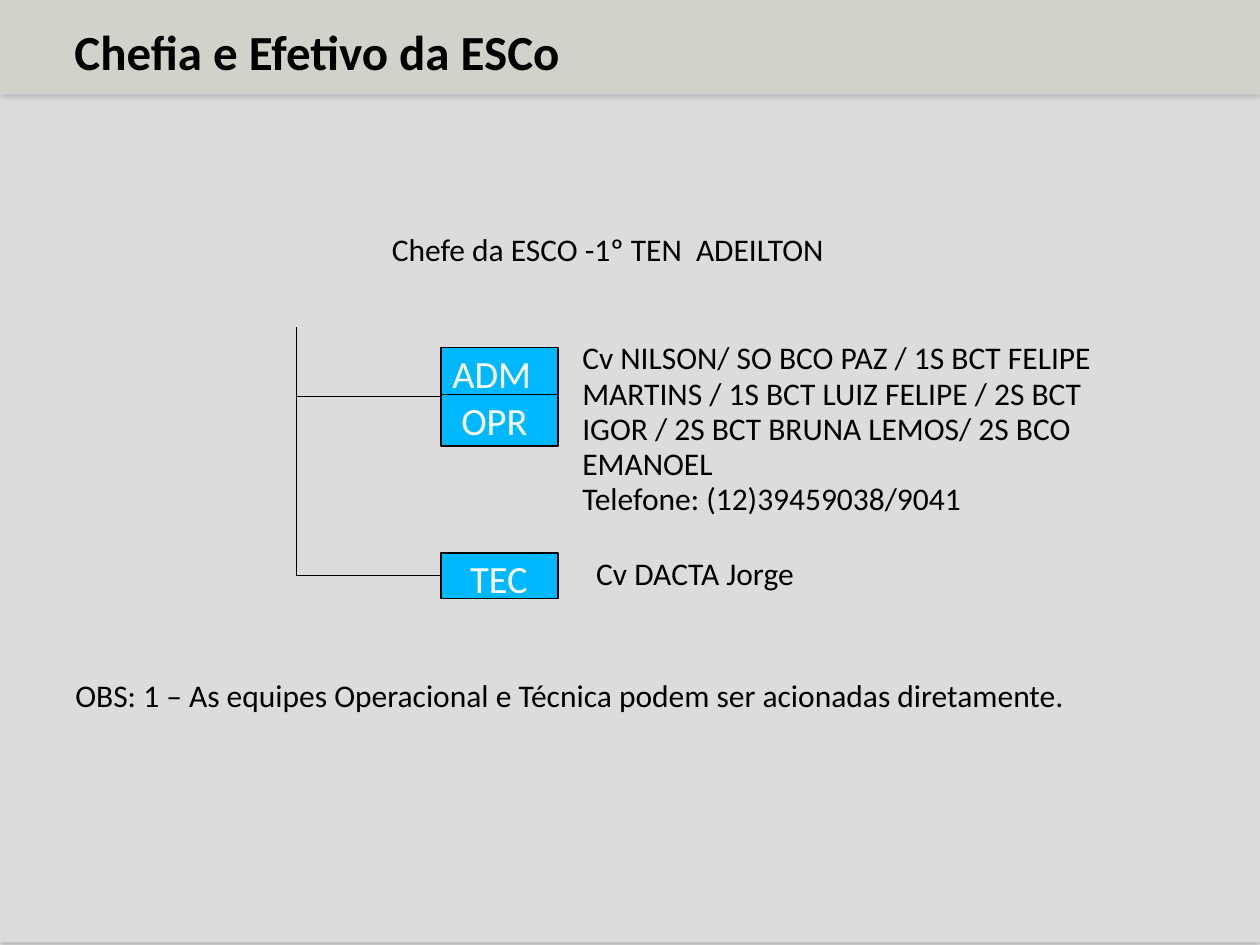
"""Build the slide that shows the head and staff of the ESCo."""
from typing import NamedTuple

from lxml import etree
from pptx import Presentation
from pptx import util as u
from pptx.dml.color import RGBColor
from pptx.enum import shapes, text
from pptx.oxml.ns import qn

BLACK = RGBColor(0x00, 0x00, 0x00)
WHITE = RGBColor(0xFF, 0xFF, 0xFF)
PANEL = RGBColor(0xDC, 0xDC, 0xDC)
BAND = RGBColor(0xD2, 0xD2, 0xCB)
BLUE = RGBColor(0x00, 0xB8, 0xFF)
TRUNK_X, BOX_X, BOX_WIDTH = 5.97, 8.89, 2.36


class Shadow(NamedTuple):
    alpha: int
    blur: float
    distance: float
    angle: int


class Label(NamedTuple):
    left: float
    top: float
    width: float
    height: float
    lines: list[str]
    spacing: float = 0.93
    inset: float = 0.23


class Sector(NamedTuple):
    name: str
    top: float
    height: float
    inset: float


LABELS = [
    Label(7.67, 4.57, 10.69, 1.68, ["Chefe da ESCO -1º TEN  ADEILTON"]),
    Label(11.51, 6.76, 12.14, 3.81, [
        "Cv NILSON/ SO BCO PAZ / 1S BCT FELIPE MARTINS / 1S BCT LUIZ FELIPE / "
        "2S BCT IGOR / 2S BCT BRUNA LEMOS/ 2S BCO EMANOEL",
        "Telefone: (12)39459038/9041",
    ]),
    Label(11.79, 11.1, 10.69, 0.97, ["Cv DACTA Jorge"]),
    Label(1.27, 13.49, 23.14, 1.02, [
        "OBS: 1 – As equipes Operacional e Técnica podem ser acionadas diretamente.",
    ], 1.0, 0.25),
]
SECTORS = [
    Sector("ADM", 7.01, 0.97, 0.23),
    Sector("OPR", 7.95, 1.04, 0.41),
    Sector("TEC", 11.15, 0.91, 0.59),
]


def write(sp, lines: list[str], size: float, color: RGBColor, bold: bool = False,
          spacing: float = 0.93, inset: float = 0.23) -> None:
    """Fill a shape with left-aligned paragraphs."""
    tf = sp.text_frame
    tf.text = "\n".join(lines)
    tf.word_wrap = True
    tf.auto_size = text.MSO_AUTO_SIZE.NONE
    tf.vertical_anchor = text.MSO_ANCHOR.TOP
    tf.margin_left, tf.margin_right = u.Cm(inset), u.Cm(0.23)
    tf.margin_top = tf.margin_bottom = u.Cm(0.13)
    for p in tf.paragraphs:
        p.alignment = text.PP_ALIGN.LEFT
        p.line_spacing = spacing
        p.space_before = u.Pt(0)
        p.font.name = "Calibri"
        p.font.size = u.Pt(size)
        p.font.bold = bold
        p.font.color.rgb = color


def add_rect(s, left: float, top: float, width: float, height: float, fill: RGBColor):
    """Add a plain rectangle without outline or shadow."""
    sp = s.shapes.add_shape(shapes.MSO_SHAPE.RECTANGLE, u.Cm(left), u.Cm(top),
                            u.Cm(width), u.Cm(height))
    sp.shadow.inherit = False
    sp.fill.solid()
    sp.fill.fore_color.rgb = fill
    sp.line.fill.background()
    return sp


def add_shadow(sp, shadow: Shadow) -> None:
    """Give a shape a soft black outer shadow."""
    effects = sp._element.spPr.find(qn("a:effectLst"))
    outer = etree.SubElement(effects, qn("a:outerShdw"), blurRad=str(u.Pt(shadow.blur)),
                             dist=str(u.Pt(shadow.distance)), dir=str(shadow.angle * 60000),
                             algn="ctr", rotWithShape="0")
    color = etree.SubElement(outer, qn("a:srgbClr"), val=str(BLACK))
    etree.SubElement(color, qn("a:alpha"), val=str(shadow.alpha * 1000))


def add_sector(s, sector: Sector):
    """Add an outlined blue box for one sector."""
    sp = add_rect(s, BOX_X, sector.top, BOX_WIDTH, sector.height, BLUE)
    sp.line.color.rgb = BLACK
    sp.line.width = u.Pt(0.75)
    write(sp, [sector.name], 22, WHITE, inset=sector.inset)
    return sp


def add_line(s, x1: float, y1: float, x2: float, y2: float):
    """Add a thin black connector."""
    line = s.shapes.add_connector(shapes.MSO_CONNECTOR.STRAIGHT, u.Cm(x1), u.Cm(y1),
                                  u.Cm(x2), u.Cm(y2))
    line.line.color.rgb = BLACK
    line.line.width = u.Pt(0.75)
    etree.SubElement(line._element.spPr, qn("a:effectLst"))
    return line


def main() -> None:
    """Compose and save the slide."""
    prs = Presentation()
    prs.slide_width, prs.slide_height = u.Cm(25.4), u.Cm(19.05)
    s = prs.slides.add_slide(prs.slide_layouts[5])

    add_shadow(add_rect(s, 0, 0, 25.4, 19, PANEL), Shadow(35, 3.1, 1.8, 90))
    add_shadow(add_rect(s, 0, 0, 25.4, 1.9, BAND), Shadow(16, 4, 1, 45))

    title = s.shapes.title
    s.shapes._spTree.append(title._element)
    title.left, title.top = u.Cm(1.27), u.Cm(0.41)
    title.width, title.height = u.Cm(22.86), u.Cm(1.8)
    write(title, ["Chefia e Efetivo da ESCo"], 28, BLACK, bold=True)

    tec = SECTORS[-1]
    tec_y = tec.top + tec.height / 2
    add_line(s, TRUNK_X, 6.6, TRUNK_X, tec_y)
    add_line(s, TRUNK_X, 8, BOX_X, 8)
    branch = add_line(s, TRUNK_X, tec_y, BOX_X, tec_y)
    boxes = [add_sector(s, sector) for sector in SECTORS]
    branch.end_connect(boxes[-1], 1)

    for label in LABELS:
        sp = s.shapes.add_textbox(u.Cm(label.left), u.Cm(label.top),
                                  u.Cm(label.width), u.Cm(label.height))
        write(sp, label.lines, 18, BLACK, spacing=label.spacing, inset=label.inset)

    prs.save("out.pptx")


if __name__ == "__main__":
    main()
